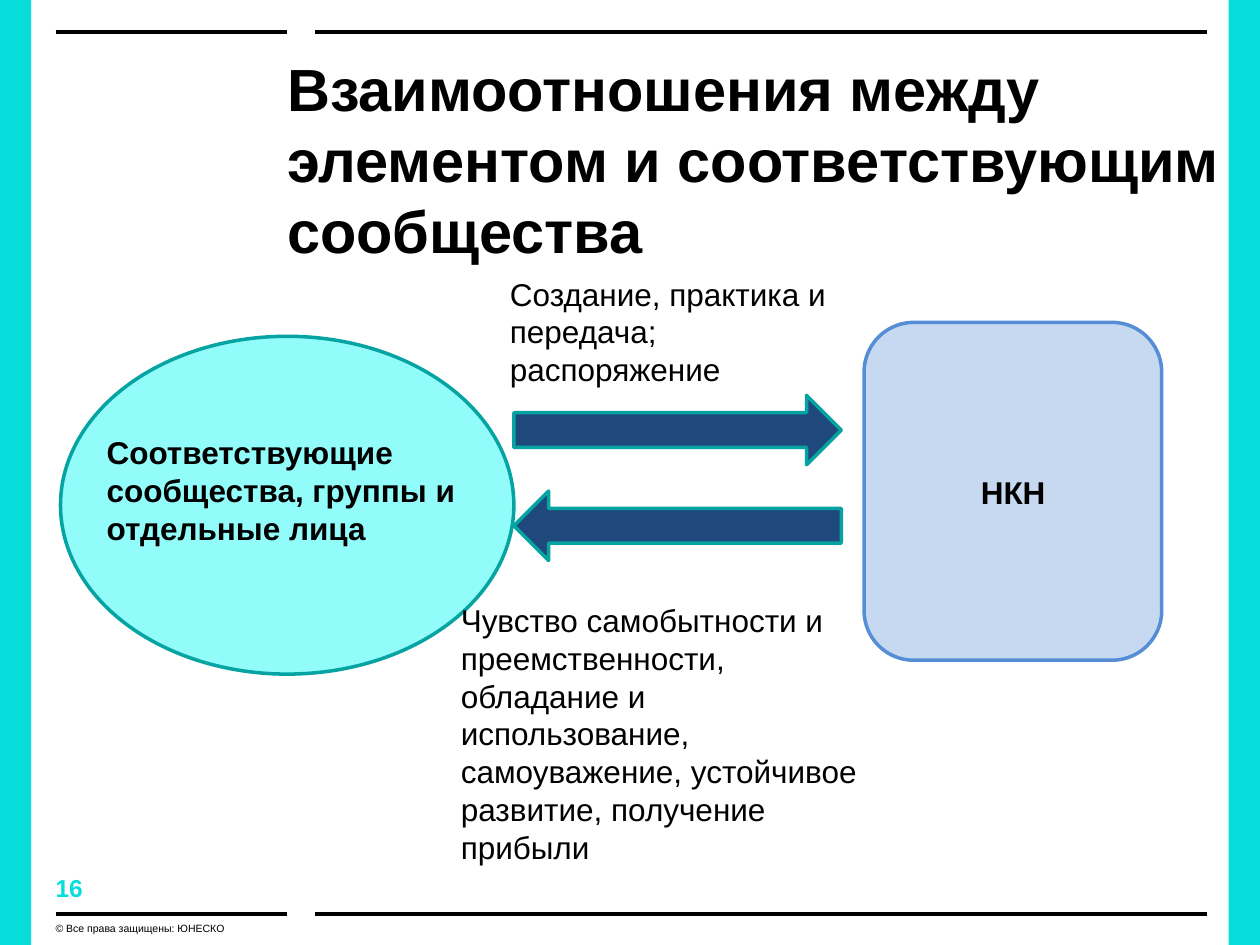
from dataclasses import dataclass

from lxml.etree import SubElement
from pptx import Presentation
from pptx.dml.color import RGBColor as RGB
from pptx.enum.shapes import MSO_CONNECTOR, MSO_SHAPE as SHAPE
from pptx.enum.text import PP_ALIGN as ALIGN
from pptx.oxml.ns import qn
from pptx.util import Cm, Pt


@dataclass(frozen=True)
class Theme:
    font: str = "Arial"
    ink: RGB = RGB(0x00, 0x00, 0x00)
    accent: RGB = RGB(0x07, 0xDE, 0xDB)
    teal: RGB = RGB(0x05, 0xA4, 0xA2)
    aqua: RGB = RGB(0x92, 0xFC, 0xFA)
    navy: RGB = RGB(0x1F, 0x49, 0x7D)
    blue: RGB = RGB(0x55, 0x8E, 0xD5)
    pale_blue: RGB = RGB(0xC6, 0xD9, 0xF1)
    title: int = 34
    body: int = 18
    number: int = 14
    small: int = 6
    stroke: int = 2


class SlideBuilder:
    def __init__(self, slide, theme):
        self.shapes = slide.shapes
        self.theme = theme

    def shape(self, kind, x, y, w, h, fill, line=None):
        sp = self.shapes.add_shape(kind, Cm(x), Cm(y), Cm(w), Cm(h))
        sp.shadow.inherit = False
        sp.fill.solid()
        sp.fill.fore_color.rgb = fill
        if line is None:
            sp.line.fill.background()
        else:
            sp.line.color.rgb = line
            sp.line.width = Pt(self.theme.stroke)

    def rule(self, x1, x2, y):
        cxn = self.shapes.add_connector(
            MSO_CONNECTOR.STRAIGHT, Cm(x1), Cm(y), Cm(x2), Cm(y))
        cxn.line.color.rgb = self.theme.ink
        cxn.line.width = Pt(self.theme.stroke)
        SubElement(cxn._element.spPr, qn("a:effectLst"))

    def text(self, words, x, y, w, h, size=None, bold=False, color=None,
             align=ALIGN.LEFT, flush=False):
        box = self.shapes.add_textbox(Cm(x), Cm(y), Cm(w), Cm(h))
        tf = box.text_frame
        tf.word_wrap = True
        if flush:
            tf.margin_left = tf.margin_right = 0
            tf.margin_top = tf.margin_bottom = 0
        p = tf.paragraphs[0]
        p.text = words
        p.alignment = align
        p.font.name = self.theme.font
        p.font.size = Pt(size or self.theme.body)
        p.font.bold = bold
        p.font.color.rgb = color or self.theme.ink


def main():
    prs = Presentation()
    prs.slide_width, prs.slide_height = Cm(25.4), Cm(19.05)
    t = Theme()
    s = SlideBuilder(prs.slides.add_slide(prs.slide_layouts[6]), t)

    for x in (0, 24.77):
        s.shape(SHAPE.RECTANGLE, x, 0, 0.63, 19.05, t.accent)
    for y in (0.64, 18.42):
        s.rule(1.12, 5.79, y)
        s.rule(6.35, 24.33, y)

    s.text("16", 1.12, 17.6, 2.9, 0.61, t.number, True, t.accent, flush=True)
    s.text("Взаимоотношения между элементом и соответствующим сообщества",
           5.79, 1.04, 20.22, 4.37, t.title, True, flush=True)
    s.text("© Все права защищены: ЮНЕСКО", 1.12, 18.59, 4.65, 0.46,
           t.small, flush=True)

    s.shape(SHAPE.OVAL, 1.22, 6.78, 9.14, 6.81, t.aqua, t.teal)
    s.shape(SHAPE.ROUNDED_RECTANGLE, 17.42, 6.5, 6, 6.81, t.pale_blue, t.blue)
    s.text("Соответствующие сообщества, группы и отдельные лица",
           1.9, 8.61, 9.4, 2.57, bold=True)
    s.text("НКН", 18.95, 9.42, 2.95, 1.02, bold=True, align=ALIGN.CENTER)

    for kind, y in ((SHAPE.RIGHT_ARROW, 7.97), (SHAPE.LEFT_ARROW, 9.9)):
        s.shape(kind, 10.36, y, 6.6, 1.4, t.navy, t.teal)

    s.text("Создание, практика и передача; распоряжение",
           10.03, 5.41, 7.21, 2.57)
    s.text("Чувство самобытности и преемственности, обладание и "
           "использование, самоуважение, устойчивое развитие, "
           "получение прибыли", 9.04, 11.99, 8.71, 5.64)

    prs.save("out.pptx")


if __name__ == "__main__":
    main()
